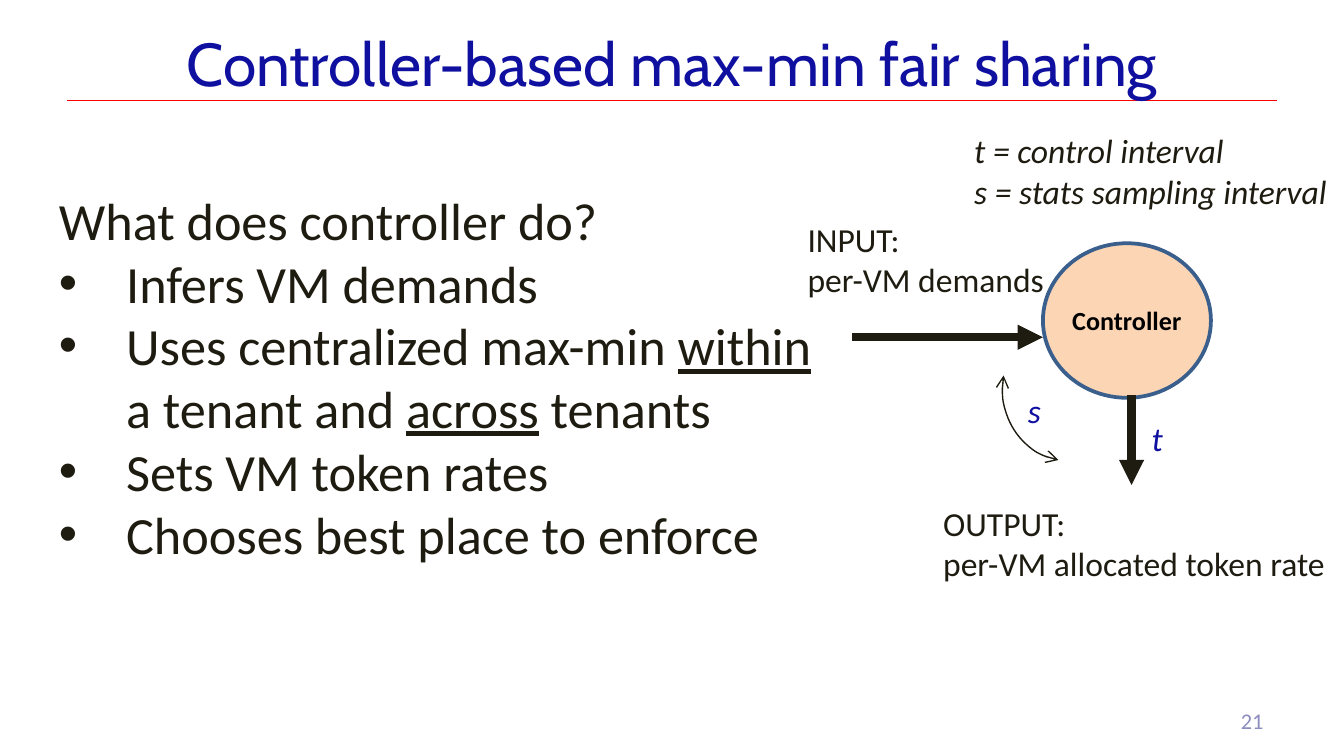
import lxml.etree
import pptx
import pptx.dml.color
import pptx.enum.shapes
import pptx.enum.text
import pptx.oxml.ns
import pptx.util

Pt = pptx.util.Pt
RGBColor = pptx.dml.color.RGBColor
SHAPE = pptx.enum.shapes.MSO_SHAPE
ALIGN = pptx.enum.text.PP_ALIGN
ANCHOR = pptx.enum.text.MSO_ANCHOR

BLUE = RGBColor(0x10, 0x10, 0xA0)
PALE_BLUE = RGBColor(0x8C, 0x8C, 0xBE)
INK = RGBColor(0x1E, 0x1C, 0x11)
BLACK = RGBColor(0, 0, 0)
RED = RGBColor(0xFF, 0, 0)
PEACH = RGBColor(0xFC, 0xD5, 0xB5)
STEEL = RGBColor(0x3A, 0x5F, 0x8C)

# Content: "•" starts a bullet, underscores enclose underlined words
LABEL = {"size": Pt(18), "name": "Calibri"}
ITALIC = {**LABEL, "italic": True}
MIDDLE = ANCHOR.MIDDLE
TEXTS = [  # box (left, top, width, height), lines, font, colour, layout
    ((36, 8.64, 648, 49.68), ["Controller-based max-min fair sharing"],
     {"size": Pt(32.4), "name": "Cabin"}, BLUE,
     {"align": ALIGN.CENTER, "anchor": MIDDLE}),
    ((24.5, 97.2, 426.2, 211),
     ["What does controller do?",
      "•Infers VM demands",
      "•Uses centralized max-min _within_ a tenant and _across_ tenants",
      "•Sets VM token rates",
      "•Chooses best place to enforce"],
     {"size": Pt(28), "name": "Calibri"}, INK, {}),
    ((516.2, 375.1, 167.8, 21.6), ["21"],
     {"size": Pt(12), "name": "Calibri"}, PALE_BLUE,
     {"align": ALIGN.RIGHT, "anchor": MIDDLE}),
    ((425.5, 113.8, 143.3, 51.1), ["INPUT:", "per-VM demands"],
     LABEL, INK, {"wrap": False}),
    ((498.2, 265.7, 221.8, 51.1), ["OUTPUT:", "per-VM allocated token rate"],
     LABEL, INK, {"wrap": False}),
    ((609.8, 220.3, 20.9, 28.8), ["t"], ITALIC, BLUE, {"wrap": False}),
    ((543.6, 205.2, 21.6, 28.8), ["s"], ITALIC, BLUE, {}),
    ((514.8, 66.2, 205.2, 51.1),
     ["t = control interval", "s = stats sampling interval"],
     ITALIC, INK, {"wrap": False}),
]
LINES = [  # start, end, colour, width, arrowhead
    ((36, 54), (684, 54), RED, 0.75, None),
    ((456.5, 180.7), (558.7, 180.7), INK, 4.5, "triangle"),
    ((606.2, 211.7), (606.2, 259.9), INK, 4.5, "triangle"),
]
CONTROLLER_BOX = (558.7, 130.3, 90, 82.8)
LOOP_BOX = (537.1, 167.8, 73.4, 79.2)
INDENT = 36


def add_xml(parent, tag, **attributes):
    lxml.etree.SubElement(parent, pptx.oxml.ns.qn(tag), attributes)


def style_line(shape, color, width, heads=()):
    shape.line.color.rgb = color
    shape.line.width = Pt(width)
    for end, head in heads:
        add_xml(shape.line._get_or_add_ln(), f"a:{end}End", type=head)


def write(shape, lines, font, color, align=ALIGN.LEFT, anchor=ANCHOR.TOP, wrap=True):
    frame = shape.text_frame
    frame.word_wrap = wrap
    frame.vertical_anchor = anchor
    for i, line in enumerate(lines):
        paragraph = frame.add_paragraph() if i else frame.paragraphs[0]
        paragraph.alignment = align
        if line.startswith("•"):
            properties = paragraph._p.get_or_add_pPr()
            properties.set("marL", str(Pt(INDENT)))
            properties.set("indent", str(-Pt(INDENT)))
            add_xml(properties, "a:buFont", typeface="Arial")
            add_xml(properties, "a:buChar", char="•")
        for j, words in enumerate(line.lstrip("•").split("_")):
            run = paragraph.add_run()
            run.text = words
            run.font.color.rgb = color
            for key, value in font.items():
                setattr(run.font, key, value)
            if j % 2:
                run.font.underline = True


deck = pptx.Presentation()
deck.slide_width, deck.slide_height = Pt(720), Pt(405)
slide = deck.slides.add_slide(deck.slide_layouts[6])
shapes = slide.shapes

# Controller
controller = shapes.add_shape(SHAPE.OVAL, *map(Pt, CONTROLLER_BOX))
controller.shadow.inherit = False
controller.fill.solid()
controller.fill.fore_color.rgb = PEACH
style_line(controller, STEEL, 2)
for side in ("left", "top", "right", "bottom"):
    setattr(controller.text_frame, f"margin_{side}", 0)
write(controller, ["Controller"], {"size": Pt(14), "name": "Calibri", "bold": True},
      BLACK, ALIGN.CENTER, MIDDLE)

# Title rule, input and output arrows
for start, end, color, width, head in LINES:
    connector = shapes.add_connector(
        pptx.enum.shapes.MSO_CONNECTOR.STRAIGHT, *map(Pt, start + end))
    style_line(connector, color, width, [("tail", head)] if head else [])
    add_xml(connector._element.spPr, "a:effectLst")

# Sampling loop
loop = shapes.add_shape(SHAPE.ARC, *map(Pt, LOOP_BOX))
loop.rotation = 189.8
loop.fill.background()
style_line(loop, INK, 0.75, [("head", "arrow"), ("tail", "arrow")])
loop.shadow.inherit = False

# Title, body text and labels
for box, lines, font, color, layout in TEXTS:
    write(shapes.add_textbox(*map(Pt, box)), lines, font, color, **layout)

deck.save("out.pptx")
